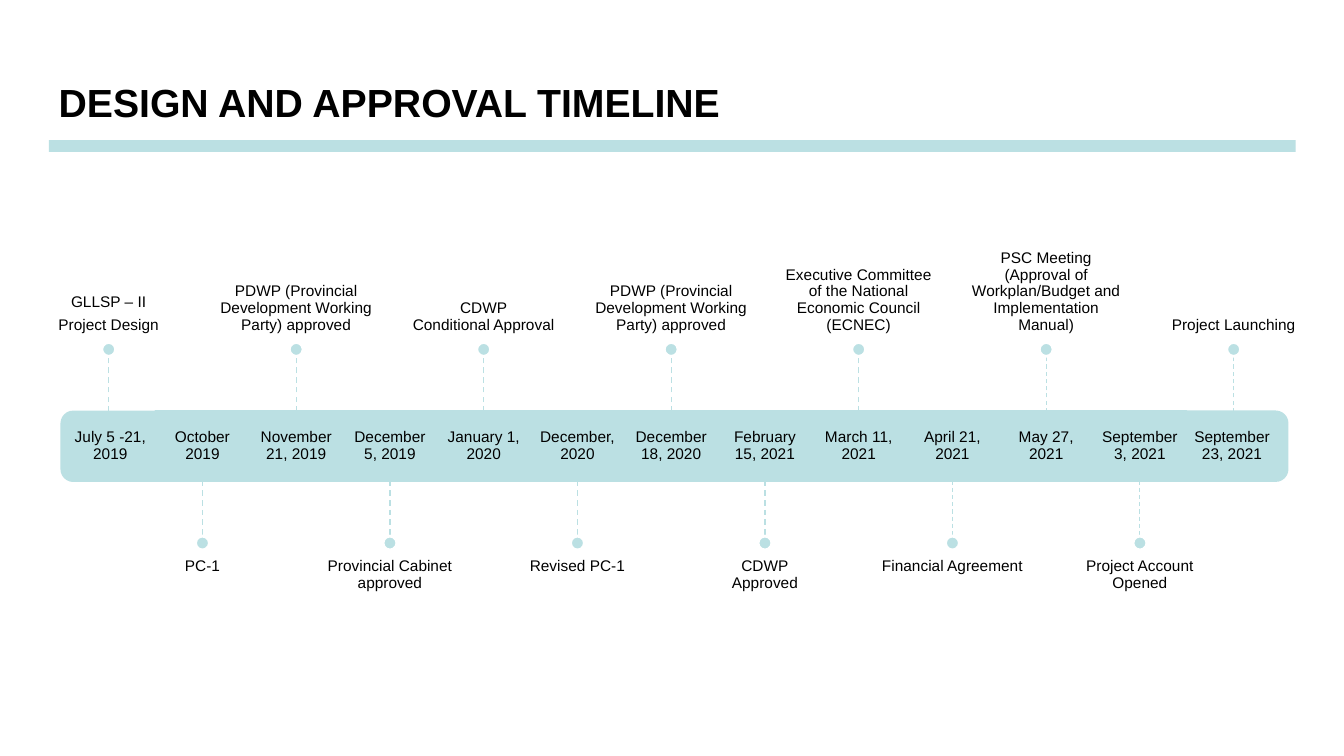
from dataclasses import dataclass
from lxml import etree
from pptx import Presentation
from pptx import util as u
from pptx.dml.color import RGBColor
from pptx.enum import dml, shapes, text
from pptx.oxml.ns import qn

TITLE = "DESIGN AND APPROVAL TIMELINE"
MILESTONES = [
    ("July 5 -21, 2019", "GLLSP – II\nProject Design"),
    ("October 2019", "PC-1"),
    ("November 21, 2019", "PDWP (Provincial Development Working Party) approved"),
    ("December 5, 2019", "Provincial Cabinet approved"),
    ("January 1, 2020", "CDWP\vConditional Approval"),
    ("December, 2020", "Revised PC-1"),
    ("December 18, 2020", "PDWP (Provincial Development Working Party) approved"),
    ("February 15, 2021", "CDWP\vApproved"),
    ("March 11, 2021", "Executive Committee of the National Economic Council (ECNEC)"),
    ("April 21, 2021", "Financial Agreement"),
    ("May 27, 2021", "PSC Meeting (Approval of Workplan/Budget and Implementation Manual)"),
    ("September 3, 2021", "Project Account Opened"),
    ("September 23, 2021", "Project Launching"),
]


@dataclass(frozen=True)
class Theme:
    font: str = "Arial"
    ink: RGBColor = RGBColor(0, 0, 0)
    band: RGBColor = RGBColor(0xBB, 0xE0, 0xE3)
    paper: RGBColor = RGBColor(255, 255, 255)
    title_size: float = 28
    label_size: float = 11


THEME = Theme()
FIRST_X, LAST_X = 2.74, 31.09
PITCH = (LAST_X - FIRST_X) / (len(MILESTONES) - 1)
LAST_WIDTH = 2.69
BAND_TOP, BAND_HEIGHT = 10.38, 1.73
BAND_BOTTOM = BAND_TOP + BAND_HEIGHT
STEM, DOT, DOT_GAP = 1.4, 0.35, 0.33
EVENT_WIDTH, ABOVE_HEIGHT, BELOW_HEIGHT = 3.94, 6.07, 5.08
INSET = 0.23
DATE_INSETS = (0.16, INSET, 0.16, INSET)
DATE_SHIFT = 0.04


def write(box, content, size=THEME.label_size, bold=False, insets=DATE_INSETS,
          align=text.PP_ALIGN.CENTER, anchor=text.MSO_ANCHOR.MIDDLE,
          spacing=0.9, after=3.85):
    frame = box.text_frame
    frame.word_wrap = True
    frame.vertical_anchor = anchor
    frame.margin_left, frame.margin_top, frame.margin_right, frame.margin_bottom = map(u.Cm, insets)
    frame.text = content
    for paragraph in frame.paragraphs:
        paragraph.alignment = align
        paragraph.line_spacing = spacing
        paragraph.space_before = u.Pt(0)
        paragraph.space_after = u.Pt(after)
        for run in paragraph.runs:
            run.font.name = THEME.font
            run.font.size = u.Pt(size)
            run.font.bold = bold
            run.font.color.rgb = THEME.ink
        for line_break in paragraph._p.findall(qn("a:br")):
            etree.SubElement(line_break, qn("a:rPr"), sz=str(int(size * 100)))


def draw(slide, kind, left, top, width, height, line=None):
    shape = slide.shapes.add_shape(kind, *map(u.Cm, (left, top, width, height)))
    shape.shadow.inherit = False
    shape.fill.solid()
    shape.fill.fore_color.rgb = THEME.band
    if line is None:
        shape.line.fill.background()
    else:
        shape.line.color.rgb = line
        shape.line.width = u.Pt(2)
    return shape


def text_area(slide, left, top, width, height):
    return slide.shapes.add_textbox(*map(u.Cm, (left, top, width, height)))


def add_date(slide, date, index, x):
    last = len(MILESTONES) - 1
    if 0 < index < last:
        cell = draw(slide, shapes.MSO_SHAPE.RECTANGLE, x - PITCH / 2, BAND_TOP,
                    PITCH, BAND_HEIGHT, THEME.band)
        write(cell, date)
        return cell
    width = LAST_WIDTH if index == last else PITCH
    cap = draw(slide, shapes.MSO_SHAPE.ROUND_2_SAME_RECTANGLE, x - BAND_HEIGHT / 2,
               BAND_TOP + (BAND_HEIGHT - width) / 2, BAND_HEIGHT, width, THEME.band)
    cap.rotation = 90 if index == last else 270
    date_width = width - 2 * DATE_SHIFT
    date_x = x - DATE_SHIFT if index == last else x + DATE_SHIFT
    write(text_area(slide, date_x - date_width / 2, BAND_TOP + 0.08, date_width, BAND_HEIGHT - 0.16), date)
    return None


def add_stem(slide, cell, x, start, end, above, weight):
    stem = slide.shapes.add_connector(shapes.MSO_CONNECTOR.STRAIGHT,
                                      *map(u.Cm, (x, start, x, end)))
    if cell is not None:
        stem.begin_connect(cell, 0 if above else 2)
    stem.line.color.rgb = THEME.band
    stem.line.width = u.Pt(weight)
    stem.line.dash_style = dml.MSO_LINE.DASH
    etree.SubElement(stem._element.spPr, qn("a:effectLst"))


def add_milestone(slide, index, date, event):
    x = FIRST_X + index * PITCH
    above = index % 2 == 0
    cell = add_date(slide, date, index, x)
    if above:
        start, end = BAND_TOP, BAND_TOP - STEM
        dot_top = end - DOT
        event_top, event_height = dot_top - ABOVE_HEIGHT, ABOVE_HEIGHT
        anchor, insets = text.MSO_ANCHOR.BOTTOM, (0, 0, 0, INSET)
    else:
        start, end = BAND_BOTTOM, BAND_BOTTOM + STEM
        dot_top = end
        event_top, event_height = dot_top + DOT_GAP, BELOW_HEIGHT
        anchor, insets = text.MSO_ANCHOR.TOP, (0, INSET, 0, 0)
    write(text_area(slide, x - EVENT_WIDTH / 2, event_top, EVENT_WIDTH, event_height),
          event, anchor=anchor, insets=insets)
    add_stem(slide, cell, x, start, end, above, 1 if index < 9 else 0.75)
    draw(slide, shapes.MSO_SHAPE.OVAL, x - DOT / 2, dot_top, DOT, DOT, THEME.paper)


def main():
    deck = Presentation()
    deck.slide_width, deck.slide_height = u.Cm(33.87), u.Cm(19.05)
    slide = deck.slides.add_slide(deck.slide_layouts[5])
    for index, (date, event) in enumerate(MILESTONES):
        add_milestone(slide, index, date, event)
    title = slide.shapes.title
    title.left, title.top, title.width, title.height = map(u.Cm, (1.23, 1.85, 19.02, 1.45))
    write(title, TITLE, size=THEME.title_size, bold=True, insets=(0.25, 0.13, 0.25, 0.13),
          align=text.PP_ALIGN.LEFT, anchor=text.MSO_ANCHOR.TOP, spacing=1.0, after=0)
    title.text_frame.auto_size = text.MSO_AUTO_SIZE.SHAPE_TO_FIT_TEXT
    draw(slide, shapes.MSO_SHAPE.RECTANGLE, 1.23, 3.53, 31.42, 0.3)
    deck.save("out.pptx")


if __name__ == "__main__":
    main()
